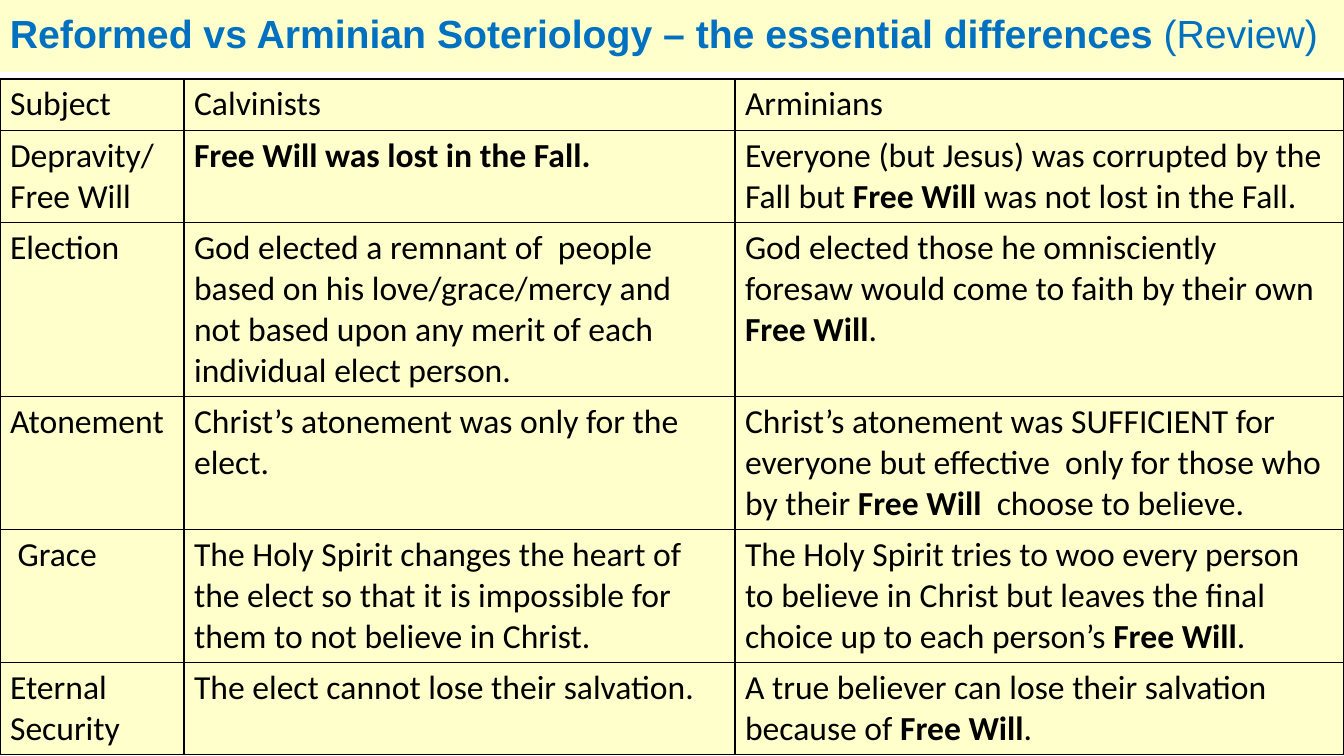
from dataclasses import dataclass

from lxml import etree
from pptx import Presentation
from pptx.dml.color import RGBColor
from pptx.enum.shapes import MSO_SHAPE
from pptx.enum.text import MSO_ANCHOR, PP_ALIGN
from pptx.oxml.ns import qn
from pptx.util import Emu, Pt

RECTANGLE = MSO_SHAPE.RECTANGLE
MIDDLE = MSO_ANCHOR.MIDDLE
LEFT = PP_ALIGN.LEFT

WIDTH, HEIGHT = 1344, 756
EMU_PER_PX = 914400 / 100.8


def px(length):
    return Emu(round(length * EMU_PER_PX))


@dataclass(frozen=True)
class Theme:
    cream: str = "FFFFCC"
    blue: str = "0070C0"
    black: str = "000000"
    title_font: str = "Arial"
    body_font: str = "Calibri"
    title_size: int = 28
    body_size: int = 24
    border_width: int = 1


class ComparisonSlide:
    def __init__(self, presentation, theme):
        self.theme = theme
        self.slide = presentation.slides.add_slide(presentation.slide_layouts[6])

    def fill(self, target):
        target.fill.solid()
        target.fill.fore_color.rgb = RGBColor.from_string(self.theme.cream)

    def set_text(self, paragraph, text, font_name, size, color):
        """Fill one paragraph; stretches between ** marks are bold."""
        paragraph.alignment = LEFT
        font = paragraph.font
        font.name, font.size = font_name, Pt(size)
        font.color.rgb = RGBColor.from_string(color)
        for index, stretch in enumerate(text.split("**")):
            if stretch:
                run = paragraph.add_run()
                run.text = stretch
                run.font.bold = index % 2 == 1

    def title(self, text, left, top, width, height):
        theme = self.theme
        band = self.slide.shapes.add_shape(
            RECTANGLE, px(left), px(top), px(width), px(height))
        band.shadow.inherit = False
        band.line.fill.background()
        self.fill(band)
        frame = band.text_frame
        frame.word_wrap = True
        frame.vertical_anchor = MIDDLE
        heading = frame.paragraphs[0]
        heading.line_spacing = 0.9
        self.set_text(heading, text, theme.title_font, theme.title_size, theme.blue)

    def border(self, cell):
        properties = cell._tc.get_or_add_tcPr()
        for side in ("a:lnL", "a:lnR", "a:lnT", "a:lnB"):
            line = etree.SubElement(
                properties, qn(side), w=str(Pt(self.theme.border_width)))
            solid = etree.SubElement(line, qn("a:solidFill"))
            etree.SubElement(solid, qn("a:srgbClr"), val=self.theme.black)

    def table(self, rows, left, top, column_widths, row_heights):
        theme = self.theme
        table = self.slide.shapes.add_table(
            len(rows), len(column_widths), px(left), px(top),
            px(sum(column_widths)), px(sum(row_heights))).table
        table.first_row = table.horz_banding = False
        for column, width in zip(table.columns, column_widths):
            column.width = px(width)
        for row, height, texts in zip(table.rows, row_heights, rows):
            row.height = px(height)
            for cell, text in zip(row.cells, texts):
                self.border(cell)
                self.fill(cell)
                frame = cell.text_frame
                for index, line in enumerate(text.split("\n")):
                    paragraph = frame.add_paragraph() if index else frame.paragraphs[0]
                    self.set_text(paragraph, line, theme.body_font,
                                  theme.body_size, theme.black)


DOCTRINES = [
    ("Subject", "Calvinists", "Arminians"),
    ("Depravity/\nFree Will",
     "**Free Will was lost in the Fall.**",
     "Everyone (but Jesus) was corrupted by the Fall but **Free Will **"
     "was not lost in the Fall."),
    ("Election",
     "God elected a remnant of  people based on his love/grace/mercy and "
     "not based upon any merit of each individual elect person.",
     "God elected those he omnisciently  foresaw would come to faith by "
     "their own **Free Will**."),
    ("Atonement",
     "Christ’s atonement was only for the elect.",
     "Christ’s atonement was SUFFICIENT for everyone but effective  only "
     "for those who by their **Free Will ** choose to believe."),
    (" Grace",
     "The Holy Spirit changes the heart of the elect so that it is "
     "impossible for them to not believe in Christ.",
     "The Holy Spirit tries to woo every person to believe in Christ but "
     "leaves the final choice up to each person’s **Free Will**."),
    ("Eternal\nSecurity",
     "The elect cannot lose their salvation.",
     "A true believer can lose their salvation because of **Free Will**."),
]

# Each row is as tall as its longest cell
LINES_PER_ROW = (1, 2, 4, 3, 3, 2)
LINE_HEIGHT, CELL_PADDING = 41, 10


def main():
    presentation = Presentation()
    presentation.slide_width, presentation.slide_height = px(WIDTH), px(HEIGHT)
    review = ComparisonSlide(presentation, Theme())

    # Title band
    review.title("**Reformed vs Arminian Soteriology – the essential differences **"
                 "(Review)", 0, 0, WIDTH, 72)

    # Comparison of doctrines
    row_heights = [lines * LINE_HEIGHT + CELL_PADDING for lines in LINES_PER_ROW]
    review.table(DOCTRINES, 0, 79, (184, 551, 609), row_heights)

    presentation.save("out.pptx")


if __name__ == "__main__":
    main()
